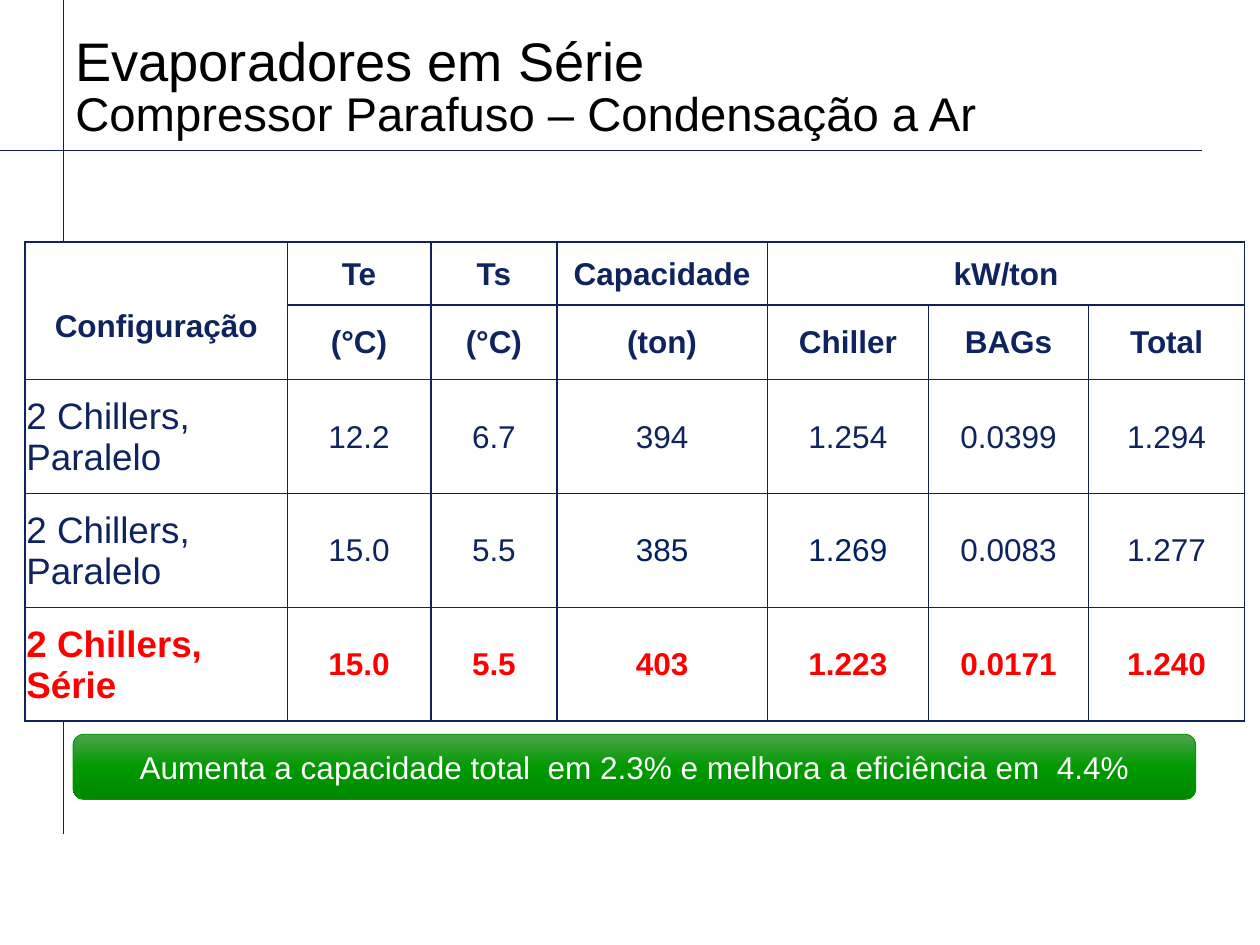
from copy import deepcopy

from lxml.etree import SubElement
from pptx import Presentation
from pptx.dml.color import RGBColor
from pptx.enum.shapes import MSO_CONNECTOR, MSO_SHAPE
from pptx.enum.text import MSO_ANCHOR, PP_ALIGN
from pptx.oxml import parse_xml
from pptx.oxml.ns import nsdecls, qn
from pptx.util import Inches, Pt

WIDTH, HEIGHT = 10, 7.5
NAVY, DEEP_NAVY, RED = "0F245F", "002060", "FF0000"
WHITE, BLACK, GREEN = "FFFFFF", "000000", "009900"
COLUMNS = [2.08, 1.14, 1, 1.67, 1.28, 1.27, 1.24]
ROWS = [0.5, 0.57, 0.9, 0.9, 0.9]
HEADINGS = [
    ["Configuração", "Te", "Ts", "Capacidade", "kW/ton", None, None],
    [None, "(°C)", "(°C)", "(ton)", "Chiller", "BAGs", "Total"],
]
RESULTS = [
    ["2 Chillers, Paralelo", "12.2", "6.7", "394", "1.254", "0.0399", "1.294"],
    ["2 Chillers, Paralelo", "15.0", "5.5", "385", "1.269", "0.0083", "1.277"],
    ["2 Chillers,\nSérie", "15.0", "5.5", "403", "1.223", "0.0171", "1.240"],
]


def rgb(value):
    """Turn a hex string into a colour."""
    return RGBColor.from_string(value)


def share(x, y, w, h):
    """Return a box in inches from shares of the slide's size."""
    return [Inches(part) for part in (x * WIDTH, y * HEIGHT, w * WIDTH, h * HEIGHT)]


def add_run(paragraph, wording, size, color, bold=False):
    """Add one formatted run to a paragraph."""
    run = paragraph.add_run()
    run.text = wording
    run.font.name, run.font.size, run.font.bold = "Arial", Pt(size), bold
    run.font.color.rgb = rgb(color)


def add_guides(slide, box):
    """Draw the vertical and horizontal guide lines across the box."""
    left, top, width, height = box
    column, row = left + int(width * 0.053), top + int(height * 0.18)
    for ends in ((column, top + height, column, top), (left, row, left + width, row)):
        guide = slide.shapes.add_connector(MSO_CONNECTOR.STRAIGHT, *ends)
        guide.line.color.rgb = rgb(NAVY)
        guide.line.width = Pt(0.75)
        SubElement(guide._element.spPr, qn("a:effectLst"))


def add_title(slide, box):
    """Write the two-line heading at the bottom of the box."""
    frame = slide.shapes.add_textbox(*box).text_frame
    frame.word_wrap = True
    frame.vertical_anchor = MSO_ANCHOR.BOTTOM
    heading = frame.paragraphs[0]
    heading.line_spacing = 0.85
    add_run(heading, "Evaporadores em Série", 31, BLACK)
    heading.add_line_break()
    add_run(heading, "Compressor Parafuso – Condensação a Ar", 27, BLACK)


def style_cell(cell):
    """Give a cell its white fill, narrow margins and navy borders."""
    cell.fill.solid()
    cell.fill.fore_color.rgb = rgb(WHITE)
    cell.vertical_anchor = MSO_ANCHOR.MIDDLE
    cell.margin_left = cell.margin_right = cell.margin_top = Inches(0.01)
    cell.margin_bottom = 0
    properties = cell._tc.get_or_add_tcPr()
    for index, side in enumerate("LRTB"):
        properties.insert(index, parse_xml(
            f'<a:ln{side} {nsdecls("a")} w="{Pt(1)}"><a:solidFill>'
            f'<a:srgbClr val="{NAVY}"/></a:solidFill></a:ln{side}>'))


def write_cell(cell, wording, size, color, bold, align):
    """Write a cell's wording, one paragraph a line."""
    for index, line in enumerate(wording.split("\n")):
        frame = cell.text_frame
        paragraph = frame.add_paragraph() if index else frame.paragraphs[0]
        paragraph.alignment = align
        add_run(paragraph, line, size, color, bold)


def add_results(slide, box):
    """Build the comparison table, with its grid scaled to the box."""
    table = slide.shapes.add_table(len(ROWS), len(COLUMNS), *box).table
    table.first_row = table.horz_banding = False
    for column, units in zip(table.columns, COLUMNS):
        column.width = int(box[2] * units / sum(COLUMNS))
    for row, units in zip(table.rows, ROWS):
        row.height = int(box[3] * units / sum(ROWS))
    for r, values in enumerate(HEADINGS + RESULTS):
        heading, series = r < len(HEADINGS), r == len(ROWS) - 1
        for c, wording in enumerate(values):
            cell = table.cell(r, c)
            style_cell(cell)
            if wording is None:
                continue
            label = c == 0 and not heading
            color = RED if series else DEEP_NAVY if (r, c) in ((3, 3), (3, 4)) else NAVY
            write_cell(cell, wording, 21 if label else 18, color, heading or series,
                       PP_ALIGN.LEFT if label else PP_ALIGN.CENTER)
    configuration = table.cell(0, 0)
    configuration.merge(table.cell(1, 0))
    configuration.vertical_anchor = MSO_ANCHOR.BOTTOM
    configuration.margin_bottom = Inches(0.28)
    table.cell(0, 4).merge(table.cell(0, 6))


def add_conclusion(slide, box):
    """Draw the green banner with the conclusion."""
    banner = slide.shapes.add_shape(MSO_SHAPE.ROUNDED_RECTANGLE, *box)
    banner.shadow.inherit = False
    banner.line.color.rgb = rgb(GREEN)
    banner.line.width = Pt(0.5)
    banner.fill.gradient()
    banner.fill.gradient_angle = 270
    stops = banner._element.spPr.find(qn("a:gradFill")).find(qn("a:gsLst"))
    stops.append(deepcopy(stops[-1]))
    shades = ((0, "4BA44B"), (0.5, GREEN), (1, "008800"))
    for stop, (position, color) in zip(banner.fill.gradient_stops, shades):
        stop.position = position
        stop.color.rgb = rgb(color)
    frame = banner.text_frame
    frame.word_wrap = True
    frame.vertical_anchor = MSO_ANCHOR.MIDDLE
    conclusion = frame.paragraphs[0]
    conclusion.alignment = PP_ALIGN.CENTER
    add_run(conclusion, "Aumenta a capacidade total  em 2.3% e melhora a eficiência em  4.4%",
            18, WHITE)


def main():
    """Build the slide and save it."""
    deck = Presentation()
    deck.slide_width, deck.slide_height = Inches(WIDTH), Inches(HEIGHT)
    slide = deck.slides.add_slide(deck.slide_layouts[6])
    add_guides(slide, share(0, 0, 0.954, 0.883))
    add_title(slide, share(0.05, 0.023, 0.753, 0.133))
    add_results(slide, share(0.02, 0.256, 0.968, 0.505))
    add_conclusion(slide, share(0.058, 0.777, 0.891, 0.069))
    deck.save("out.pptx")


if __name__ == "__main__":
    main()
